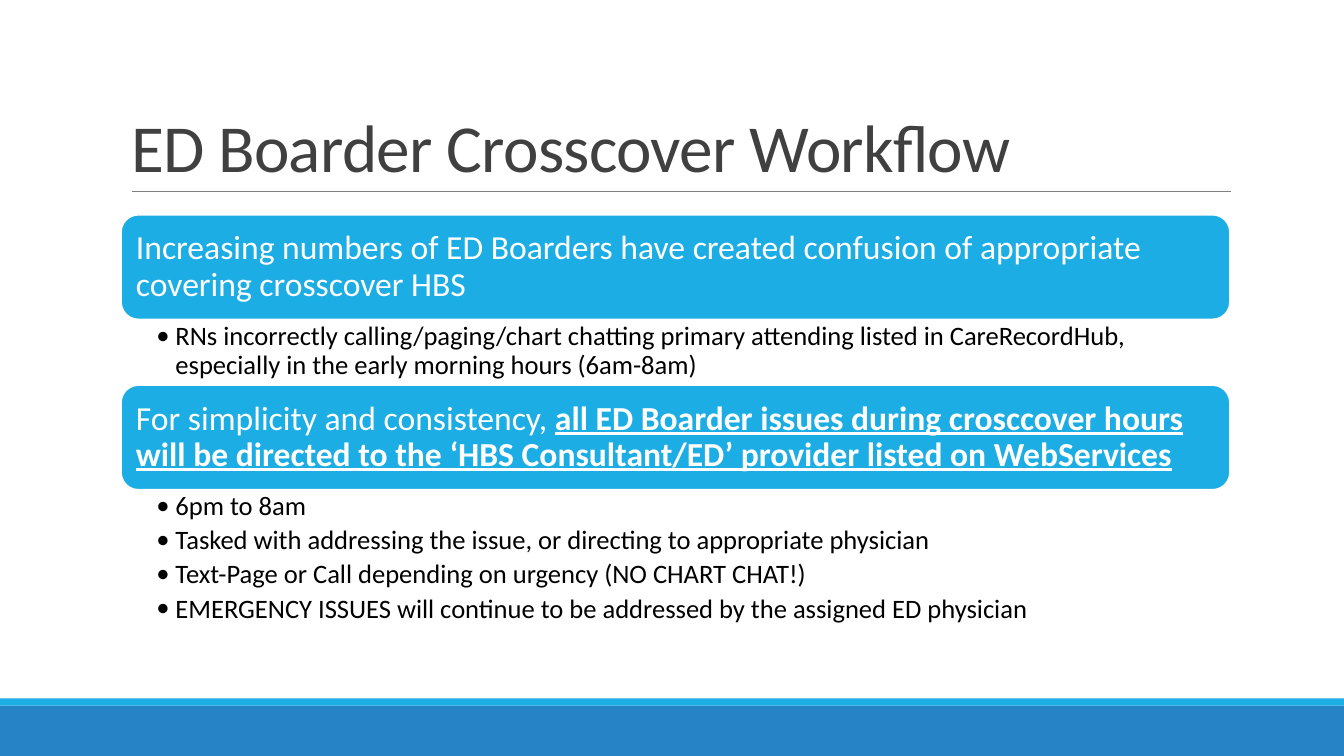
from dataclasses import dataclass
from lxml.etree import SubElement
from pptx import Presentation
from pptx.dml.color import RGBColor as Color
from pptx.enum.shapes import MSO_CONNECTOR as Connector, MSO_SHAPE as Shape
from pptx.enum.text import MSO_ANCHOR as Anchor, MSO_AUTO_SIZE as AutoSize, PP_ALIGN as Align
from pptx.oxml.ns import qn
from pptx.util import Inches, Pt


@dataclass(frozen=True)
class Theme:
    font: str = "Calibri"
    bright: Color = Color.from_string("1CADE4")
    deep: Color = Color.from_string("2683C6")
    rule: Color = Color.from_string("808080")
    heading: Color = Color.from_string("404040")
    ink: Color = Color.from_string("000000")
    white: Color = Color.from_string("FFFFFF")
    title_size: float = 48
    card_size: float = 24
    list_size: float = 19


THEME = Theme()
WIDTH, HEIGHT = 13.33, 7.5
LEFT, CONTENT_WIDTH = 1.2, 11
CARD_HEIGHT = 1.04
CONTENT_TOP = 2.13

# Each section: card text as (words, emphasised), list height, bullets
SECTIONS = [
    ([("Increasing numbers of ED Boarders have created confusion of "
       "appropriate covering crosscover HBS", False)],
     0.65,
     ["RNs incorrectly calling/paging/chart chatting primary attending listed in "
      "CareRecordHub, especially in the early morning hours (6am-8am)"]),
    ([("For simplicity and consistency, ", False),
      ("all ED Boarder issues during crosccover hours will be directed to the "
       "‘HBS Consultant/ED’ provider listed on WebServices", True)],
     1.44,
     ["6pm to 8am",
      "Tasked with addressing the issue, or directing to appropriate physician",
      "Text-Page or Call depending on urgency (NO CHART CHAT!)",
      "EMERGENCY ISSUES will continue to be addressed by the assigned ED physician"]),
]


def apply(target, formats):
    for name, value in formats.items():
        setattr(target, name, value)


def place(shape, box):
    names = ("left", "top", "width", "height")
    apply(shape, {name: Inches(length) for name, length in zip(names, box)})


def set_frame(frame, anchor, insets):
    sides = ("margin_left", "margin_top", "margin_right", "margin_bottom")
    apply(frame, {"word_wrap": True, "auto_size": AutoSize.NONE, "vertical_anchor": anchor})
    apply(frame, {side: Inches(inset) for side, inset in zip(sides, insets)})


def set_para(para, spacing, after=0):
    apply(para, {"alignment": Align.LEFT, "line_spacing": spacing,
                 "space_before": Pt(0), "space_after": Pt(after)})


def add_span(para, text, size, color, strong=False):
    span = para.add_run()
    span.text = text
    apply(span.font, {"name": THEME.font, "size": Pt(size),
                      "bold": strong, "underline": strong})
    span.font.color.rgb = color
    return span


def add_block(page, kind, box, fill):
    block = page.shapes.add_shape(kind, *map(Inches, box))
    block.shadow.inherit = False
    block.fill.solid()
    block.fill.fore_color.rgb = fill
    block.line.fill.background()
    return block


def add_footer(page, box):
    left, top, width, height = box
    stripe = 0.07
    add_block(page, Shape.RECTANGLE, (left, top + stripe, width, height - stripe), THEME.deep)
    add_block(page, Shape.RECTANGLE, (left, top, width, stripe), THEME.bright)


def add_title(page, box, text):
    left, top, width, height = box
    title = page.shapes.title
    place(title, box)
    set_frame(title.text_frame, Anchor.BOTTOM, (0.1, 0.05, 0.1, 0.05))
    para = title.text_frame.paragraphs[0]
    set_para(para, 0.85)
    span = add_span(para, text, THEME.title_size, THEME.heading)
    span.font._element.set("spc", "-50")

    # Rule under the title
    start, end, base = map(Inches, (left + 0.11, left + width + 0.01, top + height))
    rule = page.shapes.add_connector(Connector.STRAIGHT, start, base, end, base)
    rule.line.color.rgb = THEME.rule
    rule.line.width = Pt(0.5)
    SubElement(rule._element.spPr, qn("a:effectLst"))


def add_card(page, box, spans):
    card = add_block(page, Shape.ROUNDED_RECTANGLE, box, THEME.bright)
    card.line.color.rgb = THEME.white
    card.line.width = Pt(1.25)
    set_frame(card.text_frame, Anchor.MIDDLE, [0.1] * 4)
    para = card.text_frame.paragraphs[0]
    set_para(para, 0.9)
    for words, strong in spans:
        add_span(para, words, THEME.card_size, THEME.white, strong)


def fill_list(body, box, bullets):
    place(body, box)
    frame = body.text_frame
    set_frame(frame, Anchor.TOP, (0.35, 0.03, 0.19, 0.03))
    for index, text in enumerate(bullets):
        para = frame.add_paragraph() if index else frame.paragraphs[0]
        para.level = 1
        set_para(para, 0.9, after=0.2 * THEME.list_size)
        props = para._p.get_or_add_pPr()
        props.set("marL", str(Inches(0.19)))
        props.set("indent", str(-Inches(0.19)))
        SubElement(props, qn("a:buFont")).set("typeface", THEME.font)
        SubElement(props, qn("a:buChar")).set("char", "•")
        add_span(para, text, THEME.list_size, THEME.ink)


def add_sections(page, box):
    left, top, width = box
    bodies = list(page.placeholders)[1:]
    for body, (spans, list_height, bullets) in zip(bodies, SECTIONS):
        add_card(page, (left, top, width, CARD_HEIGHT), spans)
        fill_list(body, (left, top + CARD_HEIGHT, width, list_height), bullets)
        top += CARD_HEIGHT + list_height


def main():
    deck = Presentation()
    deck.slide_width, deck.slide_height = Inches(WIDTH), Inches(HEIGHT)
    # The two-content layout offers a title and one body for each list
    page = deck.slides.add_slide(deck.slide_layouts[3])
    add_footer(page, (0, HEIGHT - 0.57, WIDTH, 0.57))
    add_title(page, (LEFT, 0.31, CONTENT_WIDTH, 1.59), "ED Boarder Crosscover Workflow")
    add_sections(page, (LEFT, CONTENT_TOP, CONTENT_WIDTH))
    deck.save("out.pptx")


if __name__ == "__main__":
    main()
